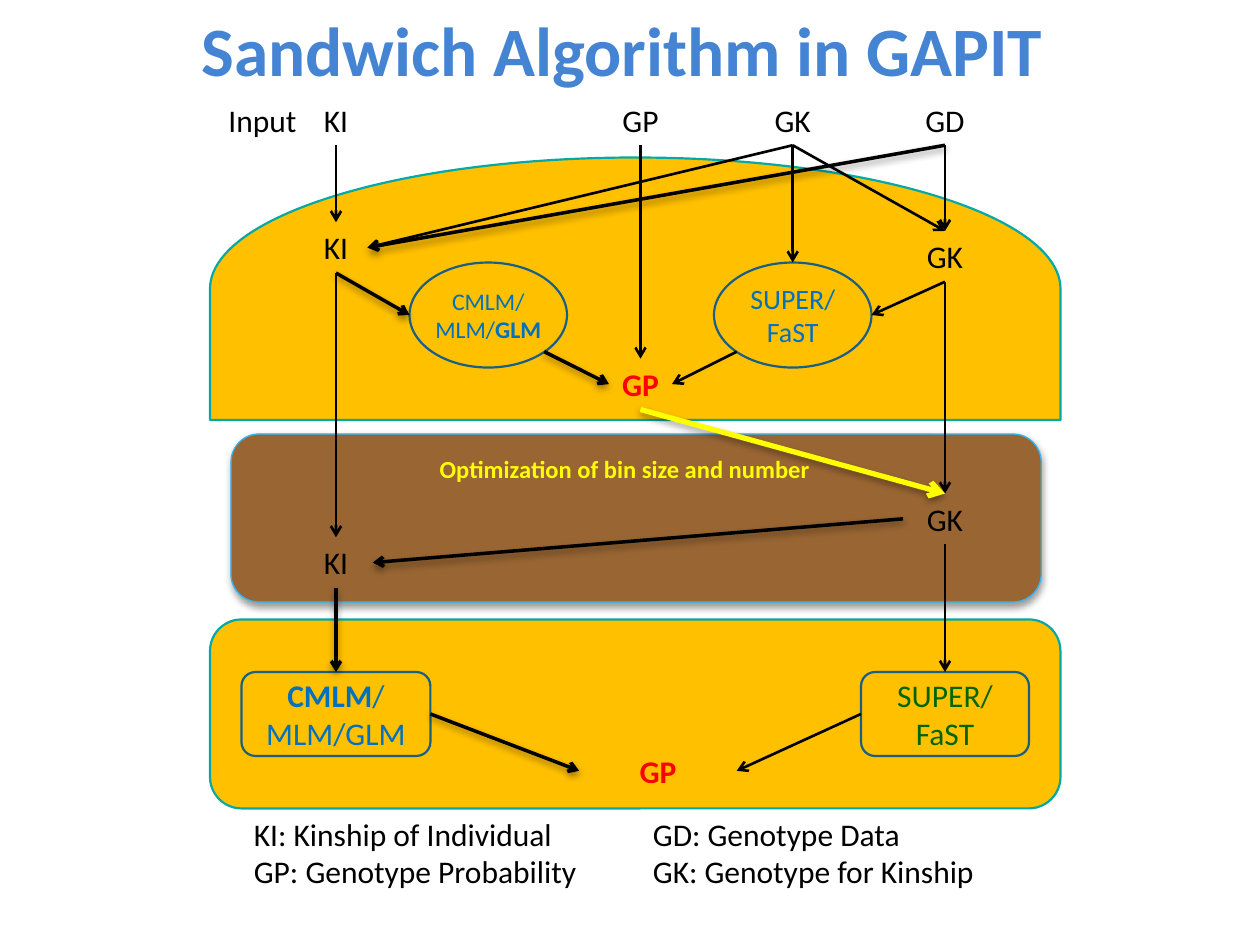
from lxml.etree import SubElement
from pptx import Presentation
from pptx.dml.color import RGBColor
from pptx.enum.shapes import MSO_CONNECTOR as Connector, MSO_SHAPE as Shape
from pptx.enum.text import MSO_ANCHOR as Anchor, PP_ALIGN as Align
from pptx.oxml.ns import qn
from pptx.util import Pt

BLACK = RGBColor(0, 0, 0)
RED = RGBColor(0xFF, 0, 0)
YELLOW = RGBColor(0xFF, 0xFF, 0)
TITLE_BLUE = RGBColor(0x45, 0x84, 0xD3)
TEXT_BLUE = RGBColor(0, 0x70, 0xC0)
GREEN = RGBColor(0, 0x66, 0)
BREAD = RGBColor(0xFF, 0xC0, 0)
FILLING = RGBColor(0x99, 0x66, 0x33)
BREAD_EDGE = RGBColor(0x04, 0xA8, 0xA4)
FILLING_EDGE = RGBColor(0x31, 0xB6, 0xFD)
METHOD_EDGE = RGBColor(0x19, 0x5F, 0x84)

TOP, LEFT, BOTTOM, RIGHT = range(4)
LABEL_HEIGHT = 29
INPUT_TOP = 54


def add_shadow(effects):
    shadow = SubElement(effects, qn("a:outerShdw"), blurRad=str(Pt(4)),
                        dist=str(Pt(2)), dir="5400000", rotWithShape="0")
    color = SubElement(shadow, qn("a:srgbClr"), val="000000")
    SubElement(color, qn("a:alpha"), val="38000")


def write_lines(shape, lines, size, color, bold=False, align=Align.CENTER,
                anchor=Anchor.MIDDLE, side_inset=0):
    frame = shape.text_frame
    frame.word_wrap = True
    frame.vertical_anchor = anchor
    frame.margin_left = frame.margin_right = Pt(side_inset)
    for index, line in enumerate(lines):
        paragraph = frame.add_paragraph() if index else frame.paragraphs[0]
        paragraph.alignment = align
        font = paragraph.font
        font.name, font.size, font.bold = "Calibri", Pt(size), bold
        font.color.rgb = color
        for text, run_bold in [(line, None)] if isinstance(line, str) else line:
            run = paragraph.add_run()
            run.text = text
            run.font.bold = run_bold


def add_text(slide, box, lines, size=18, color=BLACK, **options):
    text_box = slide.shapes.add_textbox(*map(Pt, box))
    write_lines(text_box, lines, size, color, **options)
    return text_box


def add_label(slide, text, center, top, width=48, color=BLACK, bold=False):
    box = (center - width / 2, top, width, LABEL_HEIGHT)
    return add_text(slide, box, [text], color=color, bold=bold, anchor=Anchor.TOP)


def add_block(slide, kind, box, edge, fill=None, width=1.25, shadow=False):
    shape = slide.shapes.add_shape(kind, *map(Pt, box))
    if fill is None:
        shape.fill.background()
    else:
        shape.fill.solid()
        shape.fill.fore_color.rgb = fill
    shape.line.color.rgb = edge
    shape.line.width = Pt(width)
    shape.shadow.inherit = False
    if shadow:
        add_shadow(shape.element.spPr.find(qn("a:effectLst")))
    return shape


def add_method(slide, kind, box, lines, size, color):
    shape = add_block(slide, kind, box, METHOD_EDGE)
    write_lines(shape, lines, size, color)
    shape.text_frame.margin_top = shape.text_frame.margin_bottom = 0
    return shape


def add_arrow(slide, start, end, strong=False, color=BLACK, width=None):
    points = [(0, 0) if hasattr(stop[0], "shape_id") else stop for stop in (start, end)]
    arrow = slide.shapes.add_connector(
        Connector.STRAIGHT, *(Pt(value) for point in points for value in point))
    if hasattr(start[0], "shape_id"):
        arrow.begin_connect(*start)
    if hasattr(end[0], "shape_id"):
        arrow.end_connect(*end)
    arrow.line.color.rgb = color
    arrow.line.width = Pt(width or (2 if strong else 1.5))
    SubElement(arrow.line._get_or_add_ln(), qn("a:tailEnd"), type="arrow")
    effects = SubElement(arrow.element.spPr, qn("a:effectLst"))
    if strong:
        add_shadow(effects)


def main():
    presentation = Presentation()
    presentation.slide_width, presentation.slide_height = Pt(720), Pt(540)
    slide = presentation.slides.add_slide(presentation.slide_layouts[6])

    add_block(slide, Shape.ROUNDED_RECTANGLE, (132, 248, 463, 96), FILLING_EDGE,
              FILLING, width=0.75, shadow=True)
    top_bread = add_block(slide, Shape.FLOWCHART_DELAY, (288, -78, 150, 486),
                          BREAD_EDGE, BREAD)
    top_bread.rotation = 270
    add_block(slide, Shape.ROUNDED_RECTANGLE, (120, 354, 486, 108), BREAD_EDGE, BREAD)

    add_text(slide, (36, 0, 648, 56), ["Sandwich Algorithm in GAPIT "], 39.6,
             TITLE_BLUE, bold=True)
    add_text(slide, (216, 256, 282, LABEL_HEIGHT),
             ["Optimization of bin size and number"], 14, YELLOW, bold=True,
             anchor=Anchor.TOP)
    legends = [
        (138, ["KI: Kinship of Individual", "GP: Genotype Probability"]),
        (366, ["GD: Genotype Data", "GK: Genotype for Kinship"]),
    ]
    for left, lines in legends:
        add_text(slide, (left, 462, 264, 54), lines, align=Align.LEFT,
                 anchor=Anchor.TOP, side_inset=7.2)

    add_label(slide, "Input", 150, INPUT_TOP, 60)
    ki_input = add_label(slide, "KI", 192, INPUT_TOP, 36)
    gp_input = add_label(slide, "GP", 366, INPUT_TOP)
    gk_input = add_label(slide, "GK", 453, INPUT_TOP, 54)
    gd_input = add_label(slide, "GD", 540, INPUT_TOP)
    ki_top = add_label(slide, "KI", 192, 127, 36)
    gk_top = add_label(slide, "GK", 540, 132, 36)
    gp_top = add_label(slide, "GP", 366, 205, 36, RED, True)
    ki_middle = add_label(slide, "KI", 192, 307, 42)
    gk_middle = add_label(slide, "GK", 540, 282)
    gp_bottom = add_label(slide, "GP", 376, 426, 90, RED, True)

    add_method(slide, Shape.OVAL, (234, 150, 90, 60),
               ["CMLM/", [("MLM/", False), ("GLM", True)]], 13.6, TEXT_BLUE)
    super_oval = add_method(slide, Shape.OVAL, (408, 150, 90, 60),
                            ["SUPER/", "FaST"], 16, TEXT_BLUE)
    cmlm_box = add_method(slide, Shape.ROUNDED_RECTANGLE, (138, 384, 108, 48),
                          [[("CMLM", True), ("/", False)], "MLM/GLM"], 18, TEXT_BLUE)
    super_box = add_method(slide, Shape.ROUNDED_RECTANGLE, (492, 384, 96, 48),
                           ["SUPER/", "FaST"], 18, GREEN)

    thin_arrows = [
        ((ki_input, BOTTOM), (ki_top, TOP)),
        ((gp_input, BOTTOM), (gp_top, TOP)),
        ((gk_input, BOTTOM), (super_oval, TOP)),
        ((gk_input, BOTTOM), (ki_top, RIGHT)),
        ((gk_input, BOTTOM), (gk_top, TOP)),
        ((gd_input, BOTTOM), (gk_top, TOP)),
        ((gk_top, BOTTOM), (498, 180)),
        ((421, 201), (gp_top, RIGHT)),
        ((ki_top, BOTTOM), (ki_middle, TOP)),
        ((gk_top, BOTTOM), (gk_middle, TOP)),
        ((gk_middle, BOTTOM), (super_box, TOP)),
        ((super_box, LEFT), (gp_bottom, RIGHT)),
    ]
    strong_arrows = [
        ((gd_input, BOTTOM), (ki_top, RIGHT)),
        ((ki_top, BOTTOM), (234, 180)),
        ((311, 201), (gp_top, LEFT)),
        ((gk_middle, LEFT), (ki_middle, RIGHT)),
        ((ki_middle, BOTTOM), (cmlm_box, TOP)),
        ((cmlm_box, RIGHT), (gp_bottom, LEFT)),
    ]
    for start, end in thin_arrows:
        add_arrow(slide, start, end)
    for start, end in strong_arrows:
        add_arrow(slide, start, end, strong=True)
    add_arrow(slide, (gp_top, BOTTOM), (gk_middle, TOP), strong=True,
              color=YELLOW, width=3)

    presentation.save("out.pptx")


if __name__ == "__main__":
    main()
